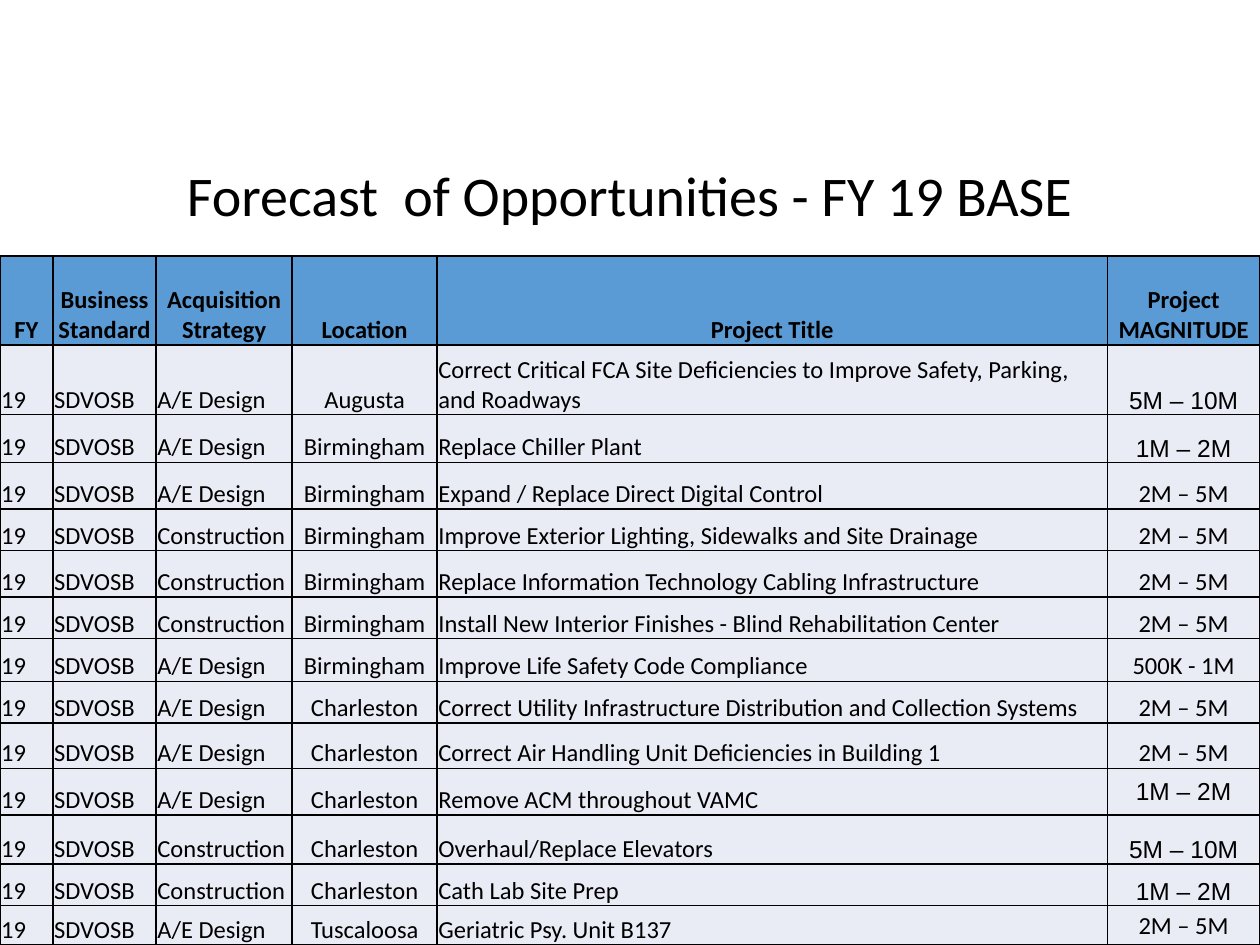
from lxml.etree import SubElement
from pptx import Presentation
from pptx.dml.color import RGBColor
from pptx.enum.text import MSO_ANCHOR as Anchor, PP_ALIGN as Align
from pptx.oxml.ns import qn
from pptx.util import Inches, Pt

BLACK, HEADER_BLUE, ROW_GRAY = "000000", "5B9BD5", "E9EBF5"
COLUMN_WIDTHS = [0.42, 0.82, 1.08, 1.15, 5.32, 1.21]
ROW_HEIGHTS = [0.71, 0.55, 0.38, 0.37, 0.33, 0.37, 0.33, 0.34, 0.33,
               0.36, 0.37, 0.39, 0.33, 0.31]
COLUMN_ALIGNS = [Align.LEFT, Align.LEFT, Align.LEFT, Align.CENTER,
                 Align.LEFT, Align.CENTER]
HEADERS = ["FY", "Business Standard", "Acquisition Strategy", "Location",
           "Project Title", "Project MAGNITUDE"]
DESIGN, BUILD = "A/E Design", "Construction"
PROJECTS = [
    (DESIGN, "Augusta", "Correct Critical FCA Site Deficiencies to Improve "
     "Safety, Parking, and Roadways", "5M – 10M"),
    (DESIGN, "Birmingham", "Replace Chiller Plant", "1M – 2M"),
    (DESIGN, "Birmingham", "Expand / Replace Direct Digital Control", "2M – 5M"),
    (BUILD, "Birmingham", "Improve Exterior Lighting, Sidewalks and Site Drainage",
     "2M – 5M"),
    (BUILD, "Birmingham", "Replace Information Technology Cabling Infrastructure",
     "2M – 5M"),
    (BUILD, "Birmingham", "Install New Interior Finishes - Blind Rehabilitation Center",
     "2M – 5M"),
    (DESIGN, "Birmingham", "Improve Life Safety Code Compliance", "500K - 1M"),
    (DESIGN, "Charleston", "Correct Utility Infrastructure Distribution and "
     "Collection Systems", "2M – 5M"),
    (DESIGN, "Charleston", "Correct Air Handling Unit Deficiencies in Building 1",
     "2M – 5M"),
    (DESIGN, "Charleston", "Remove ACM throughout VAMC", "1M – 2M"),
    (BUILD, "Charleston", "Overhaul/Replace Elevators", "5M – 10M"),
    (BUILD, "Charleston", "Cath Lab Site Prep", "1M – 2M"),
    (DESIGN, "Tuscaloosa", "Geriatric Psy. Unit B137", "2M – 5M"),
]
ARIAL_MAGNITUDES = {"5M – 10M", "1M – 2M"}
MIDDLE_MAGNITUDE_ROWS = {10, 13}


def color(value):
    """Return the colour for a hex string."""
    return RGBColor.from_string(value)


def write_text(frame, text, size=14, font="Calibri", fill=BLACK, bold=False,
               align=Align.LEFT):
    """Write one formatted paragraph into a text frame."""
    frame.word_wrap = True
    para = frame.paragraphs[0]
    para.alignment = align
    span = para.add_run()
    span.text = text
    span.font.size = Pt(size)
    span.font.name = font
    span.font.bold = bold
    span.font.color.rgb = color(fill)


def add_title(page, text):
    """Add the centred slide title."""
    box = page.shapes.add_textbox(Inches(0), Inches(1.25), Inches(10), Inches(0.58))
    box.text_frame.vertical_anchor = Anchor.MIDDLE
    write_text(box.text_frame, text, size=32, align=Align.CENTER)


def add_borders(cell, width=1, line=BLACK):
    """Draw a solid line on all four sides of a cell."""
    properties = cell._tc.get_or_add_tcPr()
    for side in ("a:lnL", "a:lnR", "a:lnT", "a:lnB"):
        border = SubElement(properties, qn(side), w=str(Pt(width)))
        solid = SubElement(border, qn("a:solidFill"))
        SubElement(solid, qn("a:srgbClr"), val=line)


def fill_cell(cell, text, fill, anchor=Anchor.BOTTOM, **text_format):
    """Set the frame, fill and text of a table cell."""
    cell.margin_left = cell.margin_right = cell.margin_top = Inches(0.01)
    cell.margin_bottom = 0
    cell.vertical_anchor = anchor
    add_borders(cell)
    cell.fill.solid()
    cell.fill.fore_color.rgb = color(fill)
    write_text(cell.text_frame, text, **text_format)


def add_forecast_table(page):
    """Add the table of forecast projects."""
    table = page.shapes.add_table(
        len(ROW_HEIGHTS), len(COLUMN_WIDTHS), Inches(0), Inches(2.03),
        Inches(sum(COLUMN_WIDTHS)), Inches(sum(ROW_HEIGHTS))).table
    table.horz_banding = False
    for column, width in zip(table.columns, COLUMN_WIDTHS):
        column.width = Inches(width)
    for row, height in zip(table.rows, ROW_HEIGHTS):
        row.height = Inches(height)
    for index, header in enumerate(HEADERS):
        fill_cell(table.cell(0, index), header, HEADER_BLUE, bold=True,
                  align=Align.CENTER)
    last = len(HEADERS) - 1
    for number, project in enumerate(PROJECTS, start=1):
        for index, text in enumerate(("19", "SDVOSB") + project):
            middle = index == last and number in MIDDLE_MAGNITUDE_ROWS
            fill_cell(table.cell(number, index), text, ROW_GRAY,
                      anchor=Anchor.MIDDLE if middle else Anchor.BOTTOM,
                      font="Arial" if text in ARIAL_MAGNITUDES else "Calibri",
                      align=COLUMN_ALIGNS[index])


def main():
    """Build and save the slide."""
    deck = Presentation()
    deck.slide_width, deck.slide_height = Inches(10), Inches(7.5)
    page = deck.slides.add_slide(deck.slide_layouts[6])
    add_title(page, "Forecast  of Opportunities - FY 19 BASE")
    add_forecast_table(page)
    deck.save("out.pptx")


if __name__ == "__main__":
    main()
